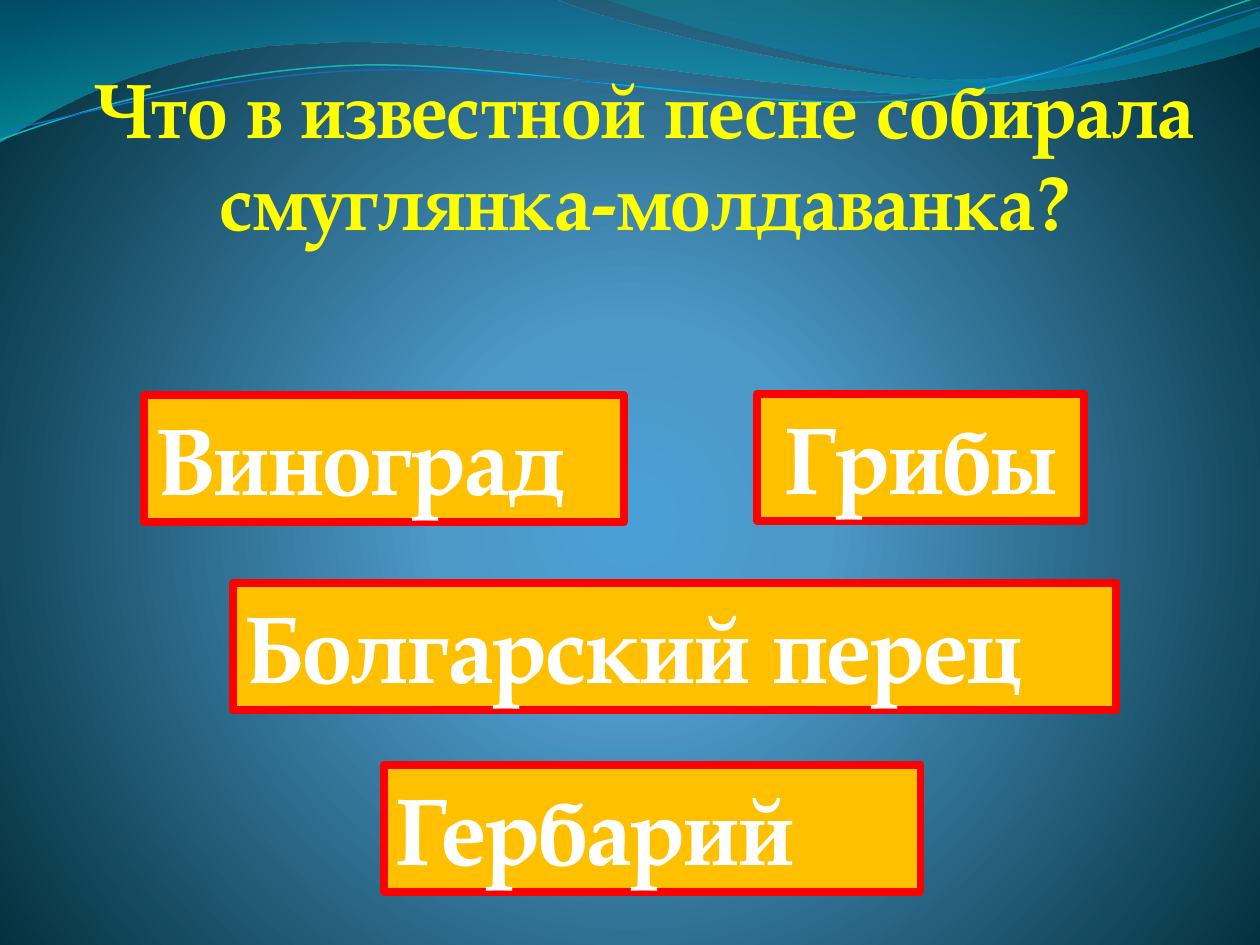
import math
from dataclasses import dataclass
from typing import NamedTuple

from lxml import etree
from pptx import Presentation
from pptx import util as u
from pptx.dml.color import RGBColor
from pptx.enum import shapes, text
from pptx.oxml import parse_xml
from pptx.oxml.ns import nsdecls, qn


@dataclass(frozen=True)
class Theme:
    font: str = "TeX Gyre Pagella"
    title_size: float = 44
    answer_size: float = 54
    border_width: float = 4.5
    title_color: str = "FFFF00"
    answer_color: str = "FFFFFF"
    answer_fill: str = "FFC000"
    border: str = "FF0000"


class Stop(NamedTuple):
    pos: int
    color: str
    opacity: int = 100


class Wave(NamedTuple):
    start: tuple
    segments: list
    stops: list


class Strand(NamedTuple):
    start: tuple
    segments: list
    center: tuple
    color: str
    width: float


class Answer(NamedTuple):
    label: str
    left: float
    top: float
    width: float
    align: text.PP_ALIGN = text.PP_ALIGN.LEFT


THEME = Theme()
ANSWER_HEIGHT = 72.7
STRAND_TILT = -2.7
DOWNWARD = '<a:lin ang="5400000" scaled="0"/>'
RADIAL = ('<a:path path="circle"><a:fillToRect l="10000" t="110000" '
          'r="10000" b="100000"/></a:path>')

BACKGROUND = [Stop(0, "4AA0D6"), Stop(25, "4C98C7"), Stop(100, "002C38")]
WAVES = [
    Wave((0, 0),
         [[(317, -0.7)],
          [(343, 12), (478, 45.4), (546, 45.4)],
          [(614, 45.4), (690, 18.7), (720, 6.5)],
          [(720.7, 26)],
          [(708, 31.7), (626, 54.7), (537, 54)],
          [(448, 54), (275, 20), (185, 24.5)],
          [(93, 26), (33, 60), (-0.7, 81.4)]],
         [Stop(0, "0074A1", 45), Stop(100, "00C6CF", 55)]),
    Wave((345, -0.7),
         [[(366, 8), (491, 44.6), (554, 46.8)],
          [(616, 49.7), (692, 23), (720, 15)],
          [(720, 0)]],
         [Stop(0, "00A1A9", 30), Stop(80, "008BBF", 45)]),
]
STRANDS = [
    Strand((0, 80),
           [[(34.6, 67), (113.8, 41), (199.4, 37.4)],
            [(284.4, 33.8), (427, 64), (513.4, 57.6)],
            [(599.8, 51), (675.4, 10.8), (718.6, -1.4)]],
           (359.3, 41.4), "0AB8BF", 0.85),
    Strand((0, 75),
           [[(33.8, 69), (118, 44), (203.8, 40.3)],
            [(290, 36.7), (430, 60.5), (516.2, 54)],
            [(602, 48.2), (677.5, 15), (720, 4.3)]],
           (359.7, 42.5), "0F6FC6", 0.75),
]
ANSWERS = [
    Answer("Болгарский перец", 133.4, 333.1, 504.5),
    Answer("Грибы", 432.7, 225, 186.8, text.PP_ALIGN.CENTER),
    Answer("Виноград", 82.1, 225.7, 274.3),
    Answer("Гербарий", 219.6, 437, 306.4),
]


def rgb(color: str) -> RGBColor:
    return RGBColor.from_string(color)


def gradient(stops: list, direction: str) -> etree._Element:
    marks = "".join(
        f'<a:gs pos="{st.pos * 1000}"><a:srgbClr val="{st.color}">'
        f'<a:alpha val="{st.opacity * 1000}"/></a:srgbClr></a:gs>'
        for st in stops)
    return parse_xml(f'<a:gradFill {nsdecls("a")} rotWithShape="1">'
                     f'<a:gsLst>{marks}</a:gsLst>{direction}</a:gradFill>')


def replace_solid(parent: etree._Element, fill: etree._Element) -> None:
    solid = next(parent.iter(qn("a:solidFill")))
    solid.getparent().replace(solid, fill)


def turn(point: tuple, center: tuple, degrees: float) -> tuple:
    angle = math.radians(degrees)
    dx, dy = point[0] - center[0], point[1] - center[1]
    return (center[0] + dx * math.cos(angle) - dy * math.sin(angle),
            center[1] + dx * math.sin(angle) + dy * math.cos(angle))


def add_outline(s, start: tuple, segments: list, close: bool):
    points = [start] + [point for seg in segments for point in seg]
    emu = [(u.Pt(x), u.Pt(y)) for x, y in points]
    builder = s.shapes.build_freeform(*emu[0], scale=1.0)
    builder.add_line_segments(emu[1:], close=close)
    sp = builder.convert_to_shape()
    sp.shadow.inherit = False
    steps = iter(list(sp.element.iter(qn("a:lnTo"))))
    for seg in segments:
        lines = [next(steps) for _ in seg]
        if len(lines) == 3:
            curve = etree.Element(qn("a:cubicBezTo"))
            lines[0].addprevious(curve)
            for line in lines:
                curve.append(line[0])
                line.getparent().remove(line)
    return sp


def add_wave(s, wave: Wave) -> None:
    sp = add_outline(s, wave.start, wave.segments, True)
    sp.line.fill.background()
    sp.fill.solid()
    replace_solid(sp.element.spPr, gradient(wave.stops, DOWNWARD))


def add_strand(s, strand: Strand) -> None:
    level = [[turn(point, strand.center, -STRAND_TILT) for point in seg]
             for seg in [[strand.start], *strand.segments]]
    sp = add_outline(s, level[0][0], level[1:], False)
    sp.rotation = STRAND_TILT
    sp.fill.background()
    sp.line.color.rgb = rgb(strand.color)
    sp.line.width = u.Pt(strand.width)


def write(tf, words: str, size: float, color: str, align: text.PP_ALIGN) -> None:
    tf.word_wrap = True
    tf.auto_size = text.MSO_AUTO_SIZE.NONE
    tf.vertical_anchor = text.MSO_ANCHOR.TOP
    p = tf.paragraphs[0]
    p.text = words
    p.alignment = align
    p.font.name = THEME.font
    p.font.size = u.Pt(size)
    p.font.bold = True
    p.font.color.rgb = rgb(color)


def add_answer(s, answer: Answer) -> None:
    sp = s.shapes.add_shape(shapes.MSO_SHAPE.RECTANGLE, u.Pt(answer.left), u.Pt(answer.top),
                            u.Pt(answer.width), u.Pt(ANSWER_HEIGHT))
    sp.shadow.inherit = False
    sp.fill.solid()
    sp.fill.fore_color.rgb = rgb(THEME.answer_fill)
    sp.line.color.rgb = rgb(THEME.border)
    sp.line.width = u.Pt(THEME.border_width)
    write(sp.text_frame, answer.label, THEME.answer_size, THEME.answer_color, answer.align)


def place_title(s, words: str) -> None:
    title = s.shapes.title
    title.left, title.top = u.Pt(37), u.Pt(31.4)
    title.width, title.height = u.Pt(663), u.Pt(388)
    write(title.text_frame, words, THEME.title_size, THEME.title_color, text.PP_ALIGN.CENTER)
    title.element.getparent().append(title.element)


def main() -> None:
    prs = Presentation()
    prs.slide_width, prs.slide_height = u.Pt(720), u.Pt(540)
    s = prs.slides.add_slide(prs.slide_layouts[5])
    s.background.fill.solid()
    replace_solid(s.element, gradient(BACKGROUND, RADIAL))
    for wave in WAVES:
        add_wave(s, wave)
    for strand in STRANDS:
        add_strand(s, strand)
    place_title(s, "Что в известной песне собирала смуглянка-молдаванка?")
    for answer in ANSWERS:
        add_answer(s, answer)
    prs.save("out.pptx")


if __name__ == "__main__":
    main()
